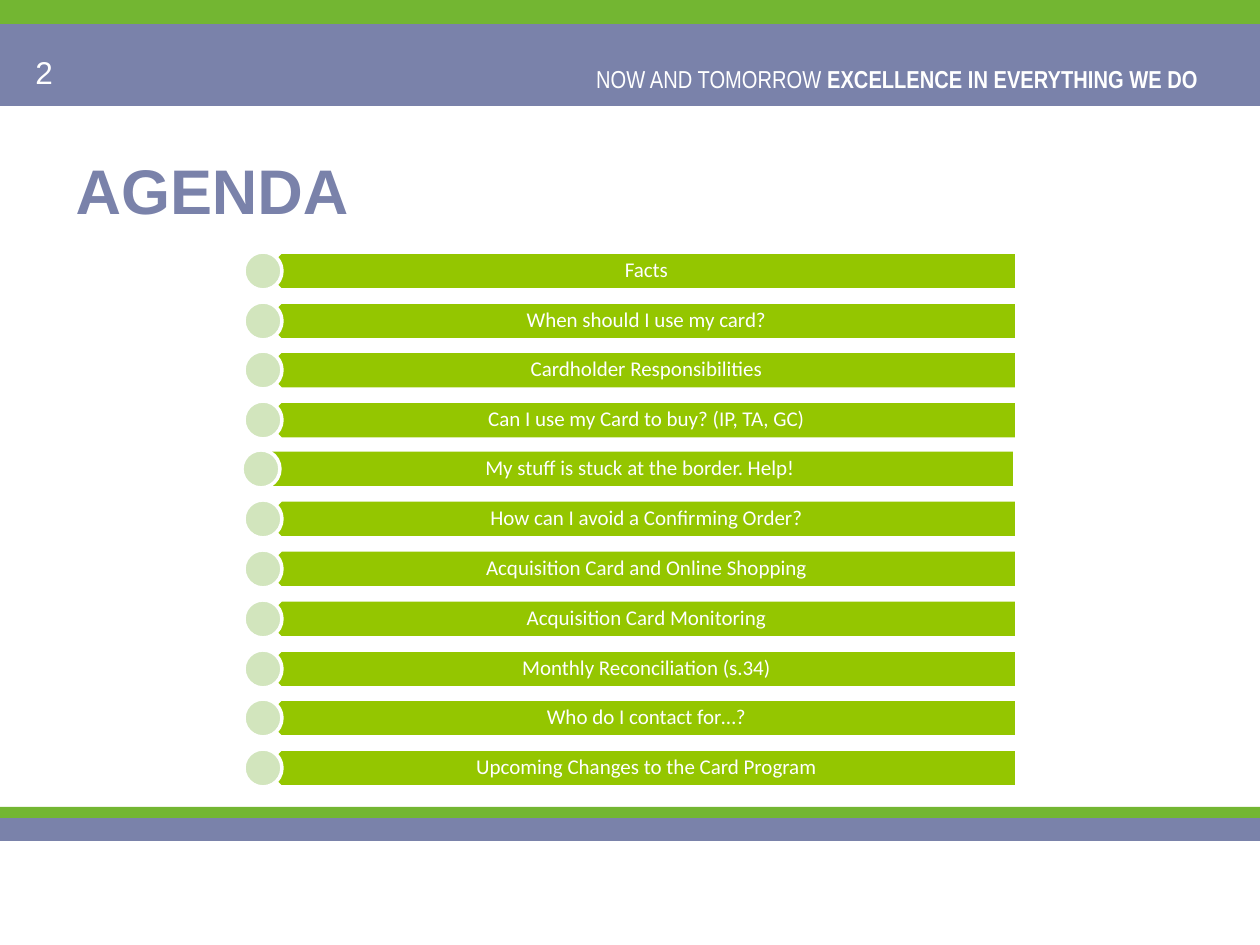
from dataclasses import dataclass

from pptx import Presentation
from pptx import util as u
from pptx.dml.color import RGBColor
from pptx.enum import shapes, text

PX = 914400 / 126


@dataclass(frozen=True)
class Theme:
    slate: RGBColor = RGBColor.from_string("7A82AA")
    green: RGBColor = RGBColor.from_string("73B632")
    lime: RGBColor = RGBColor.from_string("94C600")
    pale: RGBColor = RGBColor.from_string("D2E5BD")
    white: RGBColor = RGBColor.from_string("FFFFFF")
    heading_font: str = "Arial"
    slogan_font: str = "Arial Narrow"
    item_font: str = "Calibri"
    title_size: u.Pt = u.Pt(36)
    number_size: u.Pt = u.Pt(18)
    slogan_size: u.Pt = u.Pt(14)
    item_size: u.Pt = u.Pt(12)


theme = Theme()
presentation = Presentation()
presentation.slide_width = u.Emu(round(1260 * PX))
presentation.slide_height = u.Emu(round(945 * PX))
slide = presentation.slides.add_slide(presentation.slide_layouts[5])


def add_block(kind, box, fill, outlined=False):
    shape = slide.shapes.add_shape(kind, *(round(length * PX) for length in box))
    shape.shadow.inherit = False
    shape.fill.solid()
    shape.fill.fore_color.rgb = fill
    if outlined:
        shape.line.color.rgb = theme.white
        shape.line.width = u.Pt(2)
    else:
        shape.line.fill.background()
    return shape


def add_label(box, runs, font_name, size, align):
    """Add a white one-paragraph text box; runs are (wording, bold) pairs."""
    label = slide.shapes.add_textbox(*(round(length * PX) for length in box))
    label.text_frame.word_wrap = True
    paragraph = label.text_frame.paragraphs[0]
    paragraph.alignment = align
    paragraph.font.name = font_name
    paragraph.font.size = size
    paragraph.font.color.rgb = theme.white
    for wording, bold in runs:
        run = paragraph.add_run()
        run.text = wording
        if bold:
            run.font.bold = True
    return label


# Header and footer bands
for top, height, color in [
    (24, 82, theme.slate),
    (0, 24, theme.green),
    (818, 23, theme.slate),
    (807, 11, theme.green),
]:
    add_block(shapes.MSO_SHAPE.RECTANGLE, (0, top, 1260, height), color)

add_label(
    (580, 58, 636, 43),
    [("NOW AND TOMORROW ", False), ("EXCELLENCE IN EVERYTHING WE DO ", True)],
    theme.slogan_font, theme.slogan_size, text.PP_ALIGN.RIGHT,
)
add_label(
    (23, 47, 294, 50), [("2", False)],
    theme.heading_font, theme.number_size, text.PP_ALIGN.LEFT,
)

# Title
title = slide.shapes.title
title.left, title.top, title.width, title.height = (
    round(length * PX) for length in (63, 96, 1134, 186)
)
title.text_frame.text = "AGENDA"
title.text_frame.vertical_anchor = text.MSO_ANCHOR.MIDDLE
paragraph = title.text_frame.paragraphs[0]
paragraph.alignment = text.PP_ALIGN.LEFT
paragraph.font.name = theme.heading_font
paragraph.font.size = theme.title_size
paragraph.font.bold = True
paragraph.font.color.rgb = theme.slate

# Agenda rows, evenly spaced between the first and last top
agenda = [
    "Facts",
    "When should I use my card?",
    "Cardholder Responsibilities",
    "Can I use my Card to buy? (IP, TA, GC)",
    "My stuff is stuck at the border. Help!",
    "How can I avoid a Confirming Order?",
    "Acquisition Card and Online Shopping",
    "Acquisition Card Monitoring",
    "Monthly Reconciliation (s.34)",
    "Who do I contact for…?",
    "Upcoming Changes to the Card Program",
]
first_top, last_top, row_height = 252, 749, 38
border_row = 4  # sits slightly up and left, with a longer bar

for index, item in enumerate(agenda):
    top = first_top + round(index * (last_top - first_top) / (len(agenda) - 1))
    circle_left, bar_left, bar_right = 244, 262, 1017
    if index == border_row:
        top -= 1
        circle_left, bar_left, bar_right = 242, 251, 1015

    bar = add_block(
        shapes.MSO_SHAPE.PENTAGON,
        (bar_left, top, bar_right - bar_left, row_height), theme.lime, outlined=True,
    )
    bar.rotation = 180

    text_left = bar_left + 10
    label = add_label(
        (text_left, top, bar_right - text_left, row_height), [(item, False)],
        theme.item_font, theme.item_size, text.PP_ALIGN.CENTER,
    )
    label.text_frame.vertical_anchor = text.MSO_ANCHOR.MIDDLE
    label.text_frame.margin_left = u.Inches(0.13)
    label.text_frame.paragraphs[0].line_spacing = 0.9

    add_block(
        shapes.MSO_SHAPE.OVAL,
        (circle_left, top, row_height, row_height), theme.pale, outlined=True,
    )

presentation.save("out.pptx")
